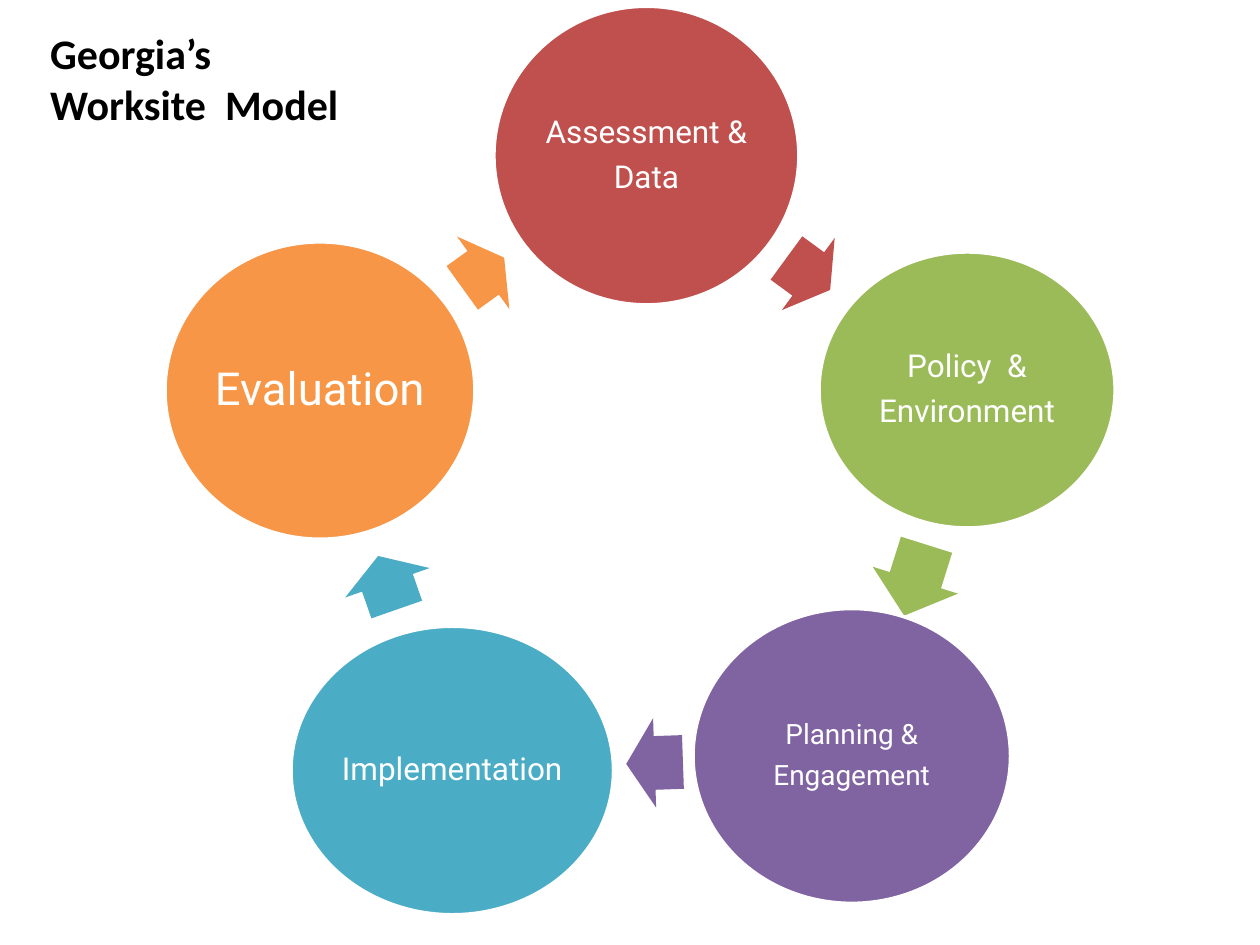
import pptx
import pptx.util
import pptx.dml.color
import pptx.enum.shapes
import pptx.enum.text

Inches, Pt = pptx.util.Inches, pptx.util.Pt
RGB = pptx.dml.color.RGBColor.from_string
SHAPE = pptx.enum.shapes.MSO_SHAPE
ALIGN = pptx.enum.text.PP_ALIGN
ANCHOR = pptx.enum.text.MSO_ANCHOR
AUTO_SIZE = pptx.enum.text.MSO_AUTO_SIZE

THEME = {
    "white": "FFFFFF", "black": "000000", "red": "C0504D", "green": "9BBB59",
    "purple": "8064A2", "teal": "4BACC6", "orange": "F79646",
    "title_font": "Calibri", "stage_font": "Roboto",
    "title": 24, "small": 16, "medium": 18, "large": 26,
}

STAGES = [
    (["Assessment &", "Data"], "red", "medium",
     (3.92, 0.05, 2.42, 2.37), (6.2, 1.82, 0.43, 0.71), 36.2),
    (["Policy  &", "Environment"], "green", "medium",
     (6.5, 2, 2.35, 2.19), (6.97, 4.25, 0.59, 0.71), 107.5),
    (["Planning &", "Engagement"], "purple", "small",
     (5.5, 4.83, 2.52, 2.34), (4.97, 5.7, 0.45, 0.71), 178),
    (["Implementation"], "teal", "medium",
     (2.31, 4.97, 2.56, 2.29), (2.85, 4.27, 0.45, 0.71), 250.8),
    (["Evaluation"], "orange", "large",
     (1.31, 1.92, 2.46, 2.36), (3.63, 1.81, 0.41, 0.71), 324.2),
]

prs = pptx.Presentation()
prs.slide_width, prs.slide_height = Inches(10), Inches(7.5)
slide = prs.slides.add_slide(prs.slide_layouts[6])


def add_filled(kind, box, color):
    shape = slide.shapes.add_shape(kind, *map(Inches, box))
    shape.shadow.inherit = False
    shape.fill.solid()
    shape.fill.fore_color.rgb = RGB(THEME[color])
    return shape


def write_lines(frame, lines, font_name, size, color, bold=False):
    frame.word_wrap = True
    frame.text = "\n".join(lines)
    for paragraph in frame.paragraphs:
        paragraph.font.name = THEME[font_name]
        paragraph.font.size = Pt(THEME[size])
        paragraph.font.bold = bold
        paragraph.font.color.rgb = RGB(THEME[color])


for lines, color, size, circle_box, arrow_box, angle in STAGES:
    circle = add_filled(SHAPE.OVAL, circle_box, color)
    circle.line.color.rgb = RGB(THEME["white"])
    circle.line.width = Pt(2)
    label = circle.text_frame
    label.margin_left = label.margin_right = Inches(0)
    label.margin_top = label.margin_bottom = Inches(0.03)
    label.vertical_anchor = ANCHOR.MIDDLE
    write_lines(label, lines, "stage_font", size, "white")
    for paragraph in label.paragraphs:
        paragraph.alignment = ALIGN.CENTER
        paragraph.line_spacing = 0.9
        paragraph.space_after = Pt(THEME[size] * 0.35)

    arrow = add_filled(SHAPE.RIGHT_ARROW, arrow_box, color)
    arrow.line.fill.background()
    arrow.rotation = angle
    arrow.adjustments[0] = 0.6
    arrow.adjustments[1] = 0.5

title = slide.shapes.add_textbox(Inches(0.3), Inches(0.17), Inches(3), Inches(0.91))
write_lines(title.text_frame, ["Georgia’s", "Worksite  Model"],
            "title_font", "title", "black", bold=True)
title.text_frame.auto_size = AUTO_SIZE.SHAPE_TO_FIT_TEXT

prs.save("out.pptx")
